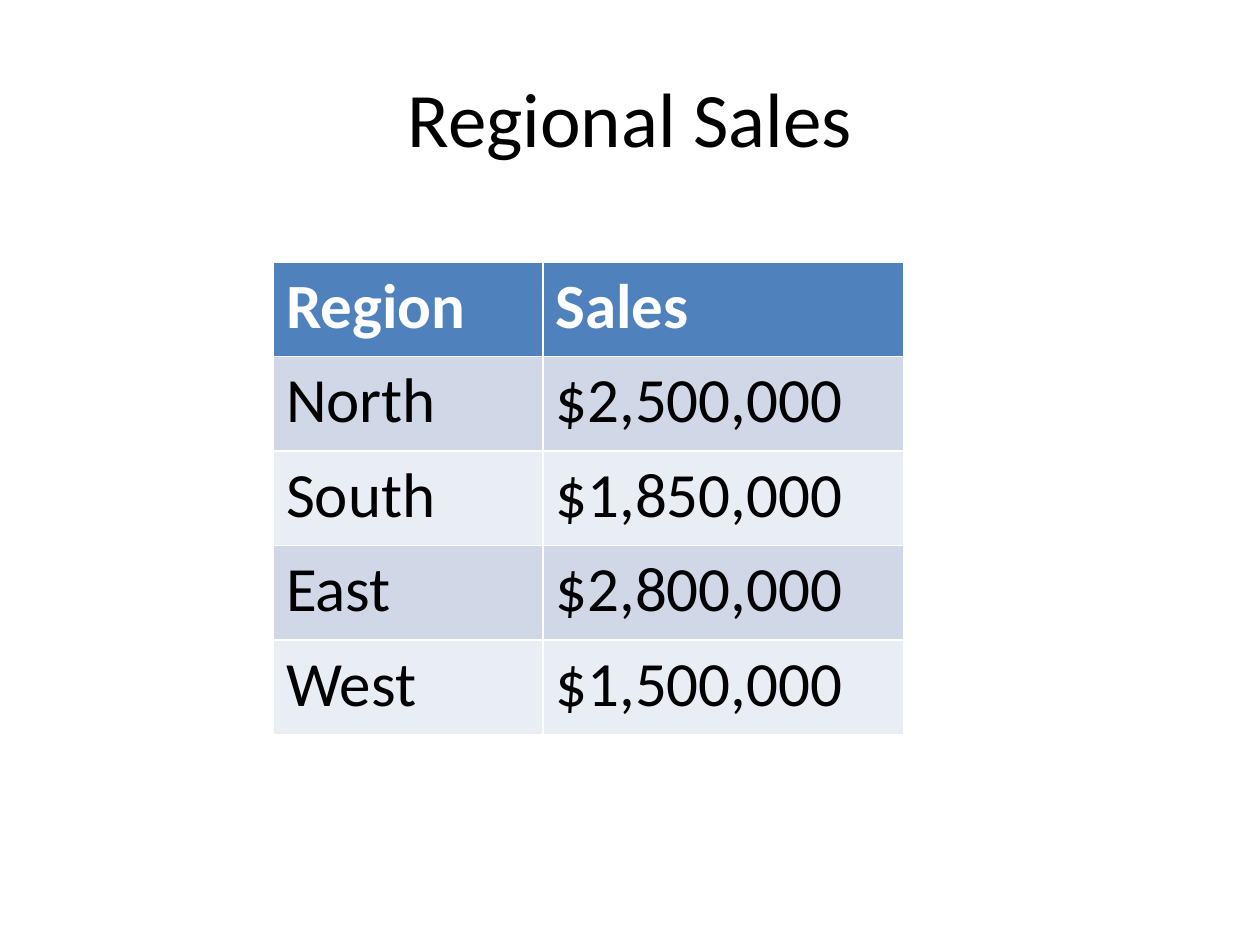
from dataclasses import dataclass

from pptx import Presentation
from pptx.dml.color import RGBColor
from pptx.enum.text import MSO_ANCHOR, PP_ALIGN
from pptx.util import Inches, Pt

CENTER = PP_ALIGN.CENTER
MIDDLE = MSO_ANCHOR.MIDDLE
TITLE_ONLY = 5


@dataclass(frozen=True)
class Theme:
    font: str = "Calibri"
    title_size: int = 44
    table_size: int = 36
    text: str = "000000"
    header_text: str = "FFFFFF"
    header_fill: str = "4F81BD"
    band_fills: tuple = ("D0D8E8", "E9EDF4")


THEME = Theme()
SALES = [
    ("Region", "Sales"),
    ("North", "$2,500,000"),
    ("South", "$1,850,000"),
    ("East", "$2,800,000"),
    ("West", "$1,500,000"),
]
COLUMN_WIDTHS = (2.14, 2.86)


def style_text(para, size, color, bold=False):
    for span in para.runs:
        span.font.name = THEME.font
        span.font.size = Pt(size)
        span.font.bold = bold
        span.font.color.rgb = RGBColor.from_string(color)


def place_title(page, text, box):
    title = page.shapes.title
    title.left, title.top, title.width, title.height = map(Inches, box)
    frame = title.text_frame
    frame.text = text
    frame.vertical_anchor = MIDDLE
    para = frame.paragraphs[0]
    para.alignment = CENTER
    style_text(para, THEME.title_size, THEME.text)


def place_table(page, rows, column_widths, box):
    # The default table style supplies the white rules between cells
    table = page.shapes.add_table(len(rows), len(column_widths), *map(Inches, box)).table
    for column, width in zip(table.columns, column_widths):
        column.width = Inches(width)

    for row_index, values in enumerate(rows):
        is_header = row_index == 0
        # Body bands alternate, starting with the darker one
        fill = THEME.header_fill if is_header else THEME.band_fills[(row_index - 1) % 2]
        color = THEME.header_text if is_header else THEME.text
        for column_index, value in enumerate(values):
            cell = table.cell(row_index, column_index)
            cell.fill.solid()
            cell.fill.fore_color.rgb = RGBColor.from_string(fill)
            cell.text_frame.text = value
            style_text(cell.text_frame.paragraphs[0], THEME.table_size, color, is_header)


def main():
    deck = Presentation()
    deck.slide_width, deck.slide_height = Inches(10), Inches(7.5)
    page = deck.slides.add_slide(deck.slide_layouts[TITLE_ONLY])
    place_title(page, "Regional Sales", (0.5, 0.3, 9, 1.25))
    place_table(page, SALES, COLUMN_WIDTHS, (2.17, 2.08, sum(COLUMN_WIDTHS), 3.75))
    deck.save("out.pptx")


if __name__ == "__main__":
    main()
